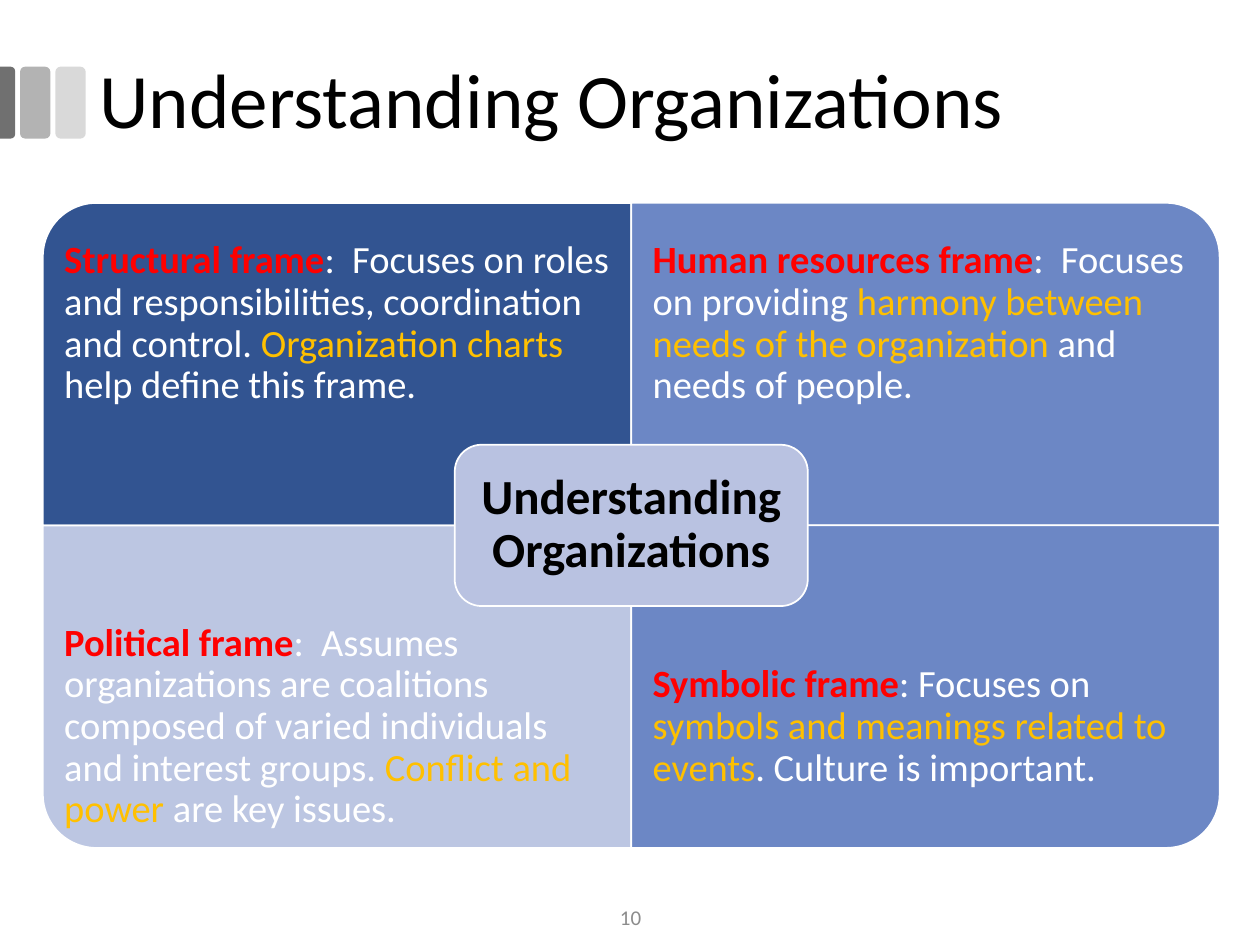
from dataclasses import dataclass

from pptx import Presentation
from pptx.dml.color import RGBColor
from pptx.enum.shapes import MSO_SHAPE
from pptx.enum.text import MSO_ANCHOR, MSO_AUTO_SIZE, PP_ALIGN
from pptx.util import Inches, Pt


@dataclass(frozen=True)
class Theme:
    font: str = "Calibri"
    black: str = "000000"
    white: str = "FFFFFF"
    term: str = "FF0000"
    accent: str = "FFC000"
    muted: str = "8C8C8C"
    center: str = "B9C2E1"
    title_size: int = 44
    center_size: int = 28
    body_size: int = 22
    number_size: int = 12


THEME = Theme()
TITLE = "Understanding Organizations"
SLIDE_NUMBER = "10"

# Column, row, rotation that turns the round corner outward, fill,
# then the text as term, plain, accent, plain.
FRAMES = [
    (0, 0, 270, "325491", (
        "Structural frame",
        ":  Focuses on roles and responsibilities, coordination and control. ",
        "Organization charts ",
        "help define this frame.")),
    (1, 0, 0, "6C87C5", (
        "Human resources frame",
        ":  Focuses on providing ",
        "harmony between needs of the organization",
        " and needs of people.")),
    (0, 1, 180, "BCC6E2", (
        "Political frame",
        ":  Assumes organizations are coalitions composed of varied "
        "individuals and interest groups. ",
        "Conflict and power",
        " are key issues.")),
    (1, 1, 90, "6C87C5", (
        "Symbolic frame",
        ": Focuses on ",
        "symbols and meanings related to events",
        ". Culture is important.")),
]
RUN_STYLES = [(THEME.term, True), (THEME.white, False),
              (THEME.accent, False), (THEME.white, False)]

SLIDE_WIDTH, SLIDE_HEIGHT = 10, 7.5
GRID_LEFT, GRID_TOP = 0.34, 1.61
CELL_WIDTH, CELL_HEIGHT = 4.67, 2.56
TEXT_HEIGHT = CELL_HEIGHT * 0.75
CENTER_WIDTH, CENTER_HEIGHT = CELL_WIDTH * 0.6, CELL_HEIGHT / 2
CENTER_MARGIN = 0.06
BAR_TOP, BAR_WIDTH, BAR_HEIGHT, BAR_PITCH = 0.53, 0.24, 0.57, 0.28
BAR_COLORS = ["707070", "B3B3B3", "D9D9D9"]
EDGE_BAR_WIDTH = BAR_WIDTH / 2


def add_block(slide, preset, left, top, width, height, fill, rotation=0, line=None):
    """Add a filled shape whose box is given as it looks after rotation."""
    if rotation % 180:
        left += (width - height) / 2
        top += (height - width) / 2
        width, height = height, width
    shape = slide.shapes.add_shape(
        preset, Inches(left), Inches(top), Inches(width), Inches(height))
    shape.rotation = rotation
    shape.shadow.inherit = False
    shape.fill.solid()
    shape.fill.fore_color.rgb = RGBColor.from_string(fill)
    if line:
        shape.line.color.rgb = RGBColor.from_string(line)
        shape.line.width = Pt(1)
    else:
        shape.line.fill.background()
    return shape


def write_text(shape, runs, size, align=PP_ALIGN.LEFT, line_spacing=0.9, inset=None):
    """Fill a shape with one paragraph of (text, color, bold) runs."""
    frame = shape.text_frame
    frame.word_wrap = True
    frame.auto_size = MSO_AUTO_SIZE.NONE
    frame.vertical_anchor = MSO_ANCHOR.MIDDLE
    if inset is not None:
        frame.margin_left = frame.margin_right = Inches(inset)
        frame.margin_top = frame.margin_bottom = Inches(inset)
    paragraph = frame.paragraphs[0]
    paragraph.alignment = align
    paragraph.line_spacing = line_spacing
    for text, color, bold in runs:
        run = paragraph.add_run()
        run.text = text
        run.font.name = THEME.font
        run.font.size = Pt(size)
        run.font.bold = bold
        run.font.color.rgb = RGBColor.from_string(color)


def add_text(slide, left, top, width, height, runs, size, **text_format):
    box = slide.shapes.add_textbox(
        Inches(left), Inches(top), Inches(width), Inches(height))
    write_text(box, runs, size, **text_format)


def add_title(slide):
    title = slide.shapes.title
    title.left, title.top = Inches(0.69), Inches(0.17)
    title.width, title.height = Inches(8.62), Inches(1.31)
    write_text(title, [(TITLE, THEME.black, False)], THEME.title_size)


def add_title_bars(slide):
    edge_color, *full_colors = BAR_COLORS
    edge_bar = add_block(slide, MSO_SHAPE.ROUND_2_SAME_RECTANGLE, 0, BAR_TOP,
                         EDGE_BAR_WIDTH, BAR_HEIGHT, edge_color, rotation=90)
    edge_bar.adjustments[0] = 0.29
    for index, color in enumerate(full_colors):
        add_block(slide, MSO_SHAPE.ROUNDED_RECTANGLE, 0.16 + index * BAR_PITCH,
                  BAR_TOP, BAR_WIDTH, BAR_HEIGHT, color)


def add_frames(slide):
    for column, row, rotation, fill, texts in FRAMES:
        left = GRID_LEFT + column * CELL_WIDTH
        top = GRID_TOP + row * CELL_HEIGHT
        add_block(slide, MSO_SHAPE.ROUND_1_RECTANGLE, left, top, CELL_WIDTH,
                  CELL_HEIGHT, fill, rotation=rotation, line=THEME.white)
        runs = [(text, *style) for text, style in zip(texts, RUN_STYLES)]
        text_top = top + row * (CELL_HEIGHT - TEXT_HEIGHT)
        add_text(slide, left, text_top, CELL_WIDTH, TEXT_HEIGHT, runs,
                 THEME.body_size, inset=0.17)


def add_center(slide):
    left = GRID_LEFT + CELL_WIDTH - CENTER_WIDTH / 2
    top = GRID_TOP + CELL_HEIGHT - CENTER_HEIGHT / 2
    add_block(slide, MSO_SHAPE.ROUNDED_RECTANGLE, left, top, CENTER_WIDTH,
              CENTER_HEIGHT, THEME.center, line=THEME.white)
    add_text(slide, left + CENTER_MARGIN, top + CENTER_MARGIN,
             CENTER_WIDTH - 2 * CENTER_MARGIN, CENTER_HEIGHT - 2 * CENTER_MARGIN,
             [(TITLE, THEME.black, True)], THEME.center_size,
             align=PP_ALIGN.CENTER, inset=0.12)


def main():
    presentation = Presentation()
    presentation.slide_width = Inches(SLIDE_WIDTH)
    presentation.slide_height = Inches(SLIDE_HEIGHT)
    slide = presentation.slides.add_slide(presentation.slide_layouts[5])
    add_title_bars(slide)
    add_title(slide)
    add_frames(slide)
    add_center(slide)
    add_text(slide, 3.88, 7.08, 2.25, 0.4, [(SLIDE_NUMBER, THEME.muted, False)],
             THEME.number_size, align=PP_ALIGN.CENTER, line_spacing=1.0)
    presentation.save("out.pptx")


if __name__ == "__main__":
    main()
